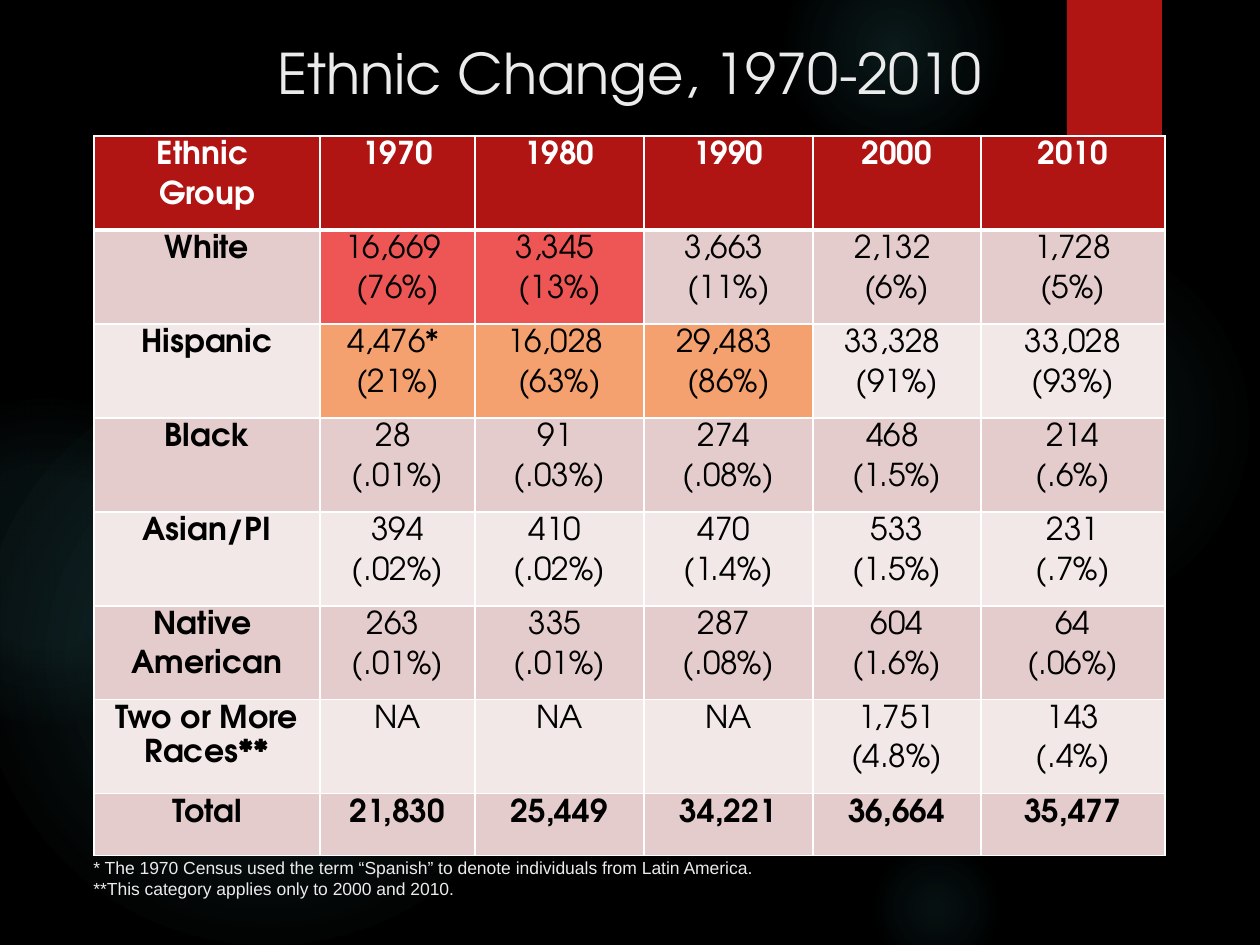
from lxml import etree
from pptx import Presentation
from pptx import util as u
from pptx.dml.color import RGBColor
from pptx.enum import shapes, text
from pptx.oxml import parse_xml
from pptx.oxml.ns import nsdecls, qn

COLOURS = {
    "night": "000000", "glow": "50B9C1", "red": "B01513", "pale": "EBEBEB",
    "white": "FFFFFF", "black": "000000", "rose": "E4CCCC", "blush": "F2E8E7",
    "coral": "ED5654", "orange": "F4A16F",
}
DISPLAY, PLAIN = "TeX Gyre Adventor", "Arial"
GLOWS = [
    ((868, 231, 388, 388), ((0, 7), (36, 6), (69, 0))),
    ((784, -63, 220, 220), ((0, 14), (36, 7), (73, 0))),
    ((868, 840, 136, 136), ((0, 9), (36, 5), (66, 0))),
    ((-21, 368, 577, 577), ((0, 11), (36, 10), (75, 0))),
    ((-116, 399, 325, 325), ((0, 8), (36, 8), (72, 0))),
]
COLUMNS = [226, 155, 169, 169, 168, 184]
ROWS = [94] * 7 + [62]
CENSUS = [
    ["Ethnic \nGroup", "1970", "1980", "1990", "2000", "2010"],
    ["White", "16,669 \n(76%)", "3,345 \n(13%)", "3,663 \n(11%)", "2,132 \n(6%)", "1,728\n(5%)"],
    ["Hispanic", "4,476* \n(21%)", "16,028 \n(63%)", "29,483 \n(86%)", "33,328 \n(91%)", "33,028\n(93%)"],
    ["Black", "28 \n(.01%)", "91 \n(.03%)", "274 \n(.08%)", "468 \n(1.5%)", "214\n(.6%)"],
    ["Asian/PI", "394\n(.02%)", "410 \n(.02%)", "470 \n(1.4%)", "533\n(1.5%)", "231\n(.7%)"],
    ["Native \nAmerican", "263 \n(.01%)", "335 \n(.01%)", "287 \n(.08%)", "604\n(1.6%)", "64\n(.06%)"],
    ["Two or More Races**", "NA", "NA", "NA", "1,751\n(4.8%)", "143\n(.4%)"],
    ["Total", "21,830", "25,449", "34,221", "36,664", "35,477"],
]
HIGHLIGHTS = {1: ("coral", (1, 2)), 2: ("orange", (1, 2, 3))}
FOOTNOTES = [
    "* The 1970 Census used the term “Spanish” to denote individuals from Latin America.",
    "**This category applies only to 2000 and 2010.",
]


def px(length):
    return u.Emu(round(length * 914400 / 126))


def colour(name):
    return RGBColor.from_string(COLOURS[name])


def add_span(para, words, font, size, name, bold=False):
    span = para.add_run()
    span.text = words
    span.font.name = font
    span.font.size = u.Pt(size)
    span.font.bold = bold
    span.font.color.rgb = colour(name)


def add_paras(frame, lines):
    for index, line in enumerate(lines):
        para = frame.add_paragraph() if index else frame.paragraphs[0]
        yield para, line


def add_plain_shape(page, kind, box):
    shape = page.shapes.add_shape(kind, *map(px, box))
    shape.shadow.inherit = False
    shape.line.fill.background()
    return shape


def add_backdrop(page, box):
    left, top, width, height = box
    page.background.fill.solid()
    page.background.fill.fore_color.rgb = colour("night")
    for (x, y, w, h), stops in GLOWS:
        glow = add_plain_shape(page, shapes.MSO_SHAPE.OVAL, (left + x, top + y, w, h))
        glow.fill.background()
        marks = "".join(
            f'<a:gs pos="{place * 1000}"><a:srgbClr val="{COLOURS["glow"]}">'
            f'<a:alpha val="{alpha * 1000}"/></a:srgbClr></a:gs>'
            for place, alpha in stops)
        gradient = parse_xml(
            f'<a:gradFill {nsdecls("a")}><a:gsLst>{marks}</a:gsLst><a:path path="circle">'
            '<a:fillToRect l="50000" t="50000" r="50000" b="50000"/></a:path></a:gradFill>')
        properties = glow._element.spPr
        properties.replace(properties.find(qn("a:noFill")), gradient)
    ribbon = add_plain_shape(page, shapes.MSO_SHAPE.RECTANGLE, (left + 1067, top, 95, 151))
    ribbon.fill.solid()
    ribbon.fill.fore_color.rgb = colour("red")


def add_title(page, box):
    frame = page.shapes.add_textbox(*map(px, box)).text_frame
    frame.word_wrap = True
    frame.vertical_anchor = text.MSO_ANCHOR.TOP
    para = frame.paragraphs[0]
    para.alignment = text.PP_ALIGN.CENTER
    add_span(para, "Ethnic Change, 1970-2010", DISPLAY, 32, "pale")


def add_footnotes(page, box):
    frame = page.shapes.add_textbox(*map(px, box)).text_frame
    frame.word_wrap = False
    frame.vertical_anchor = text.MSO_ANCHOR.MIDDLE
    for para, line in add_paras(frame, FOOTNOTES):
        para._p.get_or_add_pPr().set("indent", str(px(63)))
        add_span(para, line, PLAIN, 10, "pale")


def set_borders(cell, widths):
    properties = cell._tc.get_or_add_tcPr()
    for side, width in widths.items():
        line = etree.SubElement(properties, qn(f"a:ln{side}"), w=str(u.Pt(width)))
        fill = etree.SubElement(line, qn("a:solidFill"))
        etree.SubElement(fill, qn("a:srgbClr"), val=COLOURS["white"])


def cell_fill(row, column):
    name, columns = HIGHLIGHTS.get(row, (None, ()))
    if column in columns:
        return name
    if row == 0:
        return "red"
    return "rose" if row % 2 else "blush"


def fill_cell(cell, words, row, column):
    set_borders(cell, {"L": 1, "R": 1, "T": 3 if row == 1 else 1, "B": 1 if row else 3})
    cell.fill.solid()
    cell.fill.fore_color.rgb = colour(cell_fill(row, column))
    cell.margin_left = cell.margin_right = px(9)
    cell.margin_top, cell.margin_bottom = px(1), 0
    bold = column == 0 or row in (0, len(CENSUS) - 1)
    for para, line in add_paras(cell.text_frame, words.split("\n")):
        para.alignment = text.PP_ALIGN.CENTER
        para.line_spacing = 1.15
        para.space_before = u.Pt(3.3)
        add_span(para, line, DISPLAY, 18, "black" if row else "white", bold)


def add_census_table(page, box):
    table = page.shapes.add_table(len(ROWS), len(COLUMNS), *map(px, box)).table
    table.first_row = table.horz_banding = False
    for column, width in zip(table.columns, COLUMNS):
        column.width = px(width)
    for row, height in zip(table.rows, ROWS):
        row.height = px(height)
    for row, entries in enumerate(CENSUS):
        for column, words in enumerate(entries):
            fill_cell(table.cell(row, column), words, row, column)


def main():
    deck = Presentation()
    deck.slide_width, deck.slide_height = px(1260), px(945)
    page = deck.slides.add_slide(deck.slide_layouts[6])
    add_backdrop(page, (0, 0, 1260, 945))
    add_title(page, (63, 32, 1134, 158))
    add_footnotes(page, (18, 850, 759, 56))
    add_census_table(page, (94, 136, sum(COLUMNS), sum(ROWS)))
    deck.save("out.pptx")


if __name__ == "__main__":
    main()
